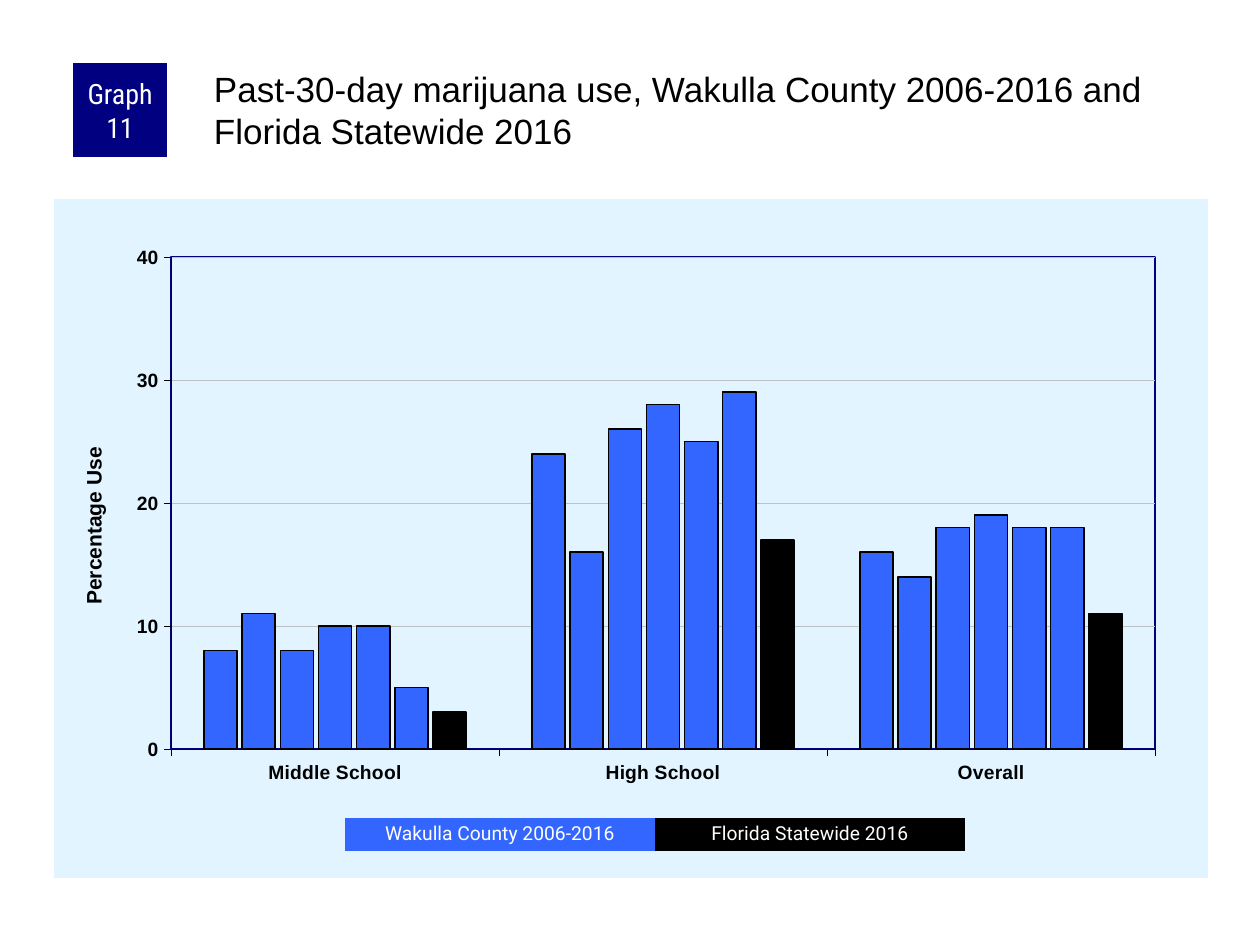
import pptx
import pptx.chart.data
import pptx.dml.color
import pptx.enum.chart
import pptx.enum.shapes
import pptx.enum.text
import pptx.oxml
import pptx.oxml.ns
import pptx.util

PX_PER_INCH = 126
BLUE, BLACK, NAVY, WHITE = "3366FF", "000000", "000080", "FFFFFF"
SCHOOLS = ["Middle School", "High School", "Overall"]
COUNTY_USE = [(8, 24, 16), (11, 16, 14), (8, 26, 18), (10, 28, 19), (10, 25, 18), (5, 29, 18)]
STATE_USE = (3, 17, 11)
NAMESPACES = pptx.oxml.ns.nsdecls("c", "a")


def px(length):
    return pptx.util.Emu(round(length * 914400 / PX_PER_INCH))


def paint(color_format, color):
    color_format.rgb = pptx.dml.color.RGBColor.from_string(color)


def fill_with(fill, color):
    fill.solid()
    paint(fill.fore_color, color)


def stroke(line, color, points):
    fill_with(line.fill, color)
    line.width = pptx.util.Pt(points)


def style_font(font, name, size, color, bold=None):
    font.name = name
    font.size = pptx.util.Pt(size)
    font.bold = bold
    paint(font.color, color)


def set_margins(frame, left, top, right, bottom):
    frame.margin_left, frame.margin_top = px(left), px(top)
    frame.margin_right, frame.margin_bottom = px(right), px(bottom)


def place_layout(parent, index, **settings):
    for old in parent.findall(pptx.oxml.ns.qn("c:layout")):
        parent.remove(old)
    entries = "".join(f'<c:{key} val="{value}"/>' for key, value in settings.items())
    parent.insert(index, pptx.oxml.parse_xml(
        f"<c:layout {NAMESPACES}><c:manualLayout>{entries}</c:manualLayout></c:layout>"))


def area_style(fill, line):
    return pptx.oxml.parse_xml(f"<c:spPr {NAMESPACES}>{fill}<a:ln w=\"12700\">{line}</a:ln></c:spPr>")


def solid(color):
    return f'<a:solidFill><a:srgbClr val="{color}"/></a:solidFill>'


def add_label(slide, box, text, color, font_name, size):
    label = slide.shapes.add_shape(pptx.enum.shapes.MSO_SHAPE.RECTANGLE, *map(px, box))
    label.shadow.inherit = False
    fill_with(label.fill, color)
    label.line.fill.background()
    frame = label.text_frame
    frame.word_wrap = True
    frame.vertical_anchor = pptx.enum.text.MSO_ANCHOR.MIDDLE
    set_margins(frame, 6, 0, 6, 0)
    paragraph = frame.paragraphs[0]
    paragraph.text = text
    paragraph.alignment = pptx.enum.text.PP_ALIGN.CENTER
    style_font(paragraph.font, font_name, size, WHITE)
    return paragraph


def add_header(slide, left, top, width, height):
    add_label(slide, (left, top, 94, 94), "Graph 11", NAVY, "Roboto Condensed", 16)
    heading = slide.shapes.add_textbox(*map(px, (left + 137, top, width - 137, height)))
    frame = heading.text_frame
    frame.word_wrap = True
    set_margins(frame, 4, 4, 0, 0)
    paragraph = frame.paragraphs[0]
    paragraph.text = "Past-30-day marijuana use, Wakulla County 2006-2016 and Florida Statewide 2016"
    style_font(paragraph.font, "Arial", 20, BLACK)


def style_axis(axis):
    axis.major_tick_mark = pptx.enum.chart.XL_TICK_MARK.OUTSIDE
    axis.minor_tick_mark = pptx.enum.chart.XL_TICK_MARK.NONE
    style_font(axis.tick_labels.font, "Arial", 11, BLACK, True)
    stroke(axis.format.line, BLACK, 0.25)


def style_value_axis(axis):
    axis.minimum_scale, axis.maximum_scale, axis.major_unit = 0, 40, 10
    axis.has_major_gridlines = True
    stroke(axis.major_gridlines.format.line, "C0C0C0", 0.25)
    title = axis.axis_title
    title.text_frame.text = "Percentage Use"
    style_font(title.text_frame.paragraphs[0].font, "Arial", 12, BLACK, True)
    place_layout(title._element, 1, xMode="edge", yMode="edge", x=0.02, y=0.36)


def add_use_chart(slide, left, top, width, height):
    use = pptx.chart.data.CategoryChartData()
    use.categories = SCHOOLS
    for number, values in enumerate([*COUNTY_USE, STATE_USE], 1):
        use.add_series(f"Series {number}", values)
    chart = slide.shapes.add_chart(
        pptx.enum.chart.XL_CHART_TYPE.COLUMN_CLUSTERED,
        *map(px, (left, top, width, height)), use).chart
    chart.has_legend = False
    chart.has_title = False
    style_font(chart.font, "Arial", 8, BLACK)

    columns = chart.plots[0]
    columns.gap_width, columns.overlap = 200, -15
    columns.vary_by_categories = False
    for number, series in enumerate(columns.series):
        fill_with(series.format.fill, BLUE if number < len(COUNTY_USE) else BLACK)
        stroke(series.format.line, BLACK, 1)
    style_axis(chart.category_axis)
    style_axis(chart.value_axis)
    style_value_axis(chart.value_axis)

    chart_part = chart._chartSpace.find(pptx.oxml.ns.qn("c:chart"))
    chart_part.addnext(area_style(solid("E1F4FF"), "<a:noFill/>"))
    plot_area = chart_part.find(pptx.oxml.ns.qn("c:plotArea"))
    plot_area.append(area_style("<a:noFill/>", solid(NAVY)))
    place_layout(plot_area, 0, layoutTarget="inner", xMode="edge", yMode="edge",
                 x=round(117 / width, 4), y=round(58 / height, 4),
                 w=round(984 / width, 4), h=round(492 / height, 4))


def add_key(slide, left, top, width, height):
    entries = [("Wakulla County 2006-2016", BLUE), ("Florida Statewide 2016", BLACK)]
    entry_width = width // len(entries)
    for column, (text, color) in enumerate(entries):
        box = (left + column * entry_width, top, entry_width, height)
        add_label(slide, box, text, color, "Roboto", 11).line_spacing = 0.9


def main():
    deck = pptx.Presentation()
    deck.slide_width, deck.slide_height = px(1260), px(945)
    slide = deck.slides.add_slide(deck.slide_layouts[6])
    add_use_chart(slide, 54, 199, 1154, 679)
    add_header(slide, 73, 63, 1135, 105)
    add_key(slide, 345, 818, 620, 33)
    deck.save("out.pptx")


if __name__ == "__main__":
    main()
